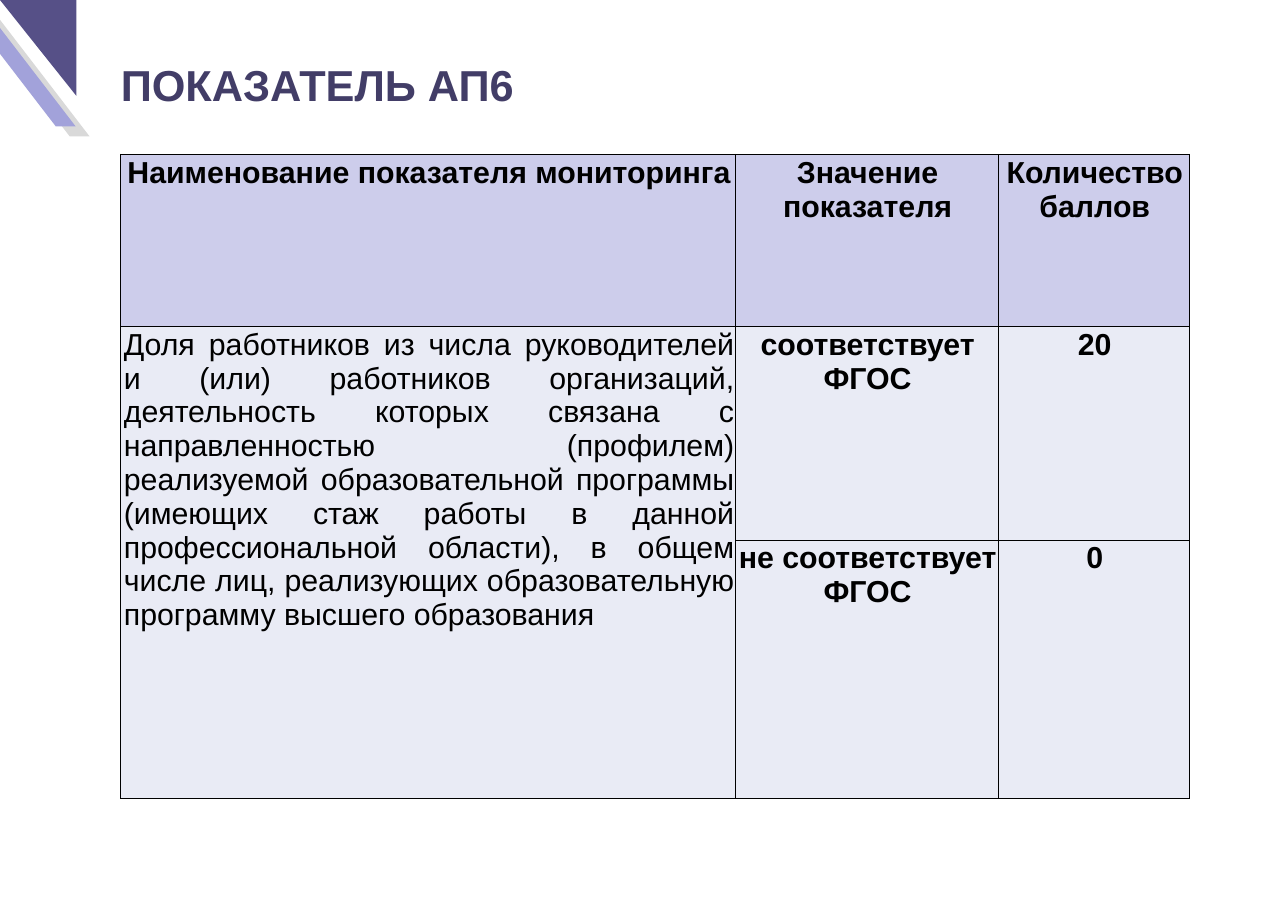
from dataclasses import dataclass

from lxml import etree
from pptx import Presentation
from pptx.dml.color import RGBColor
from pptx.enum import shapes, text
from pptx.oxml import ns
from pptx.util import Inches, Pt

TITLE = "ПОКАЗАТЕЛЬ АП6"
HEADER = ["Наименование показателя мониторинга", "Значение показателя", "Количество баллов"]
INDICATOR = (
    "Доля работников из числа руководителей и (или) работников организаций, "
    "деятельность которых связана с направленностью (профилем) реализуемой "
    "образовательной программы (имеющих стаж работы в данной профессиональной "
    "области), в общем числе лиц, реализующих образовательную программу высшего "
    "образования"
)
ROWS = [
    HEADER,
    [INDICATOR, "соответствует ФГОС", "20"],
    ["", "не соответствует ФГОС", "0"],
]
COLUMN_WIDTHS = [7.89, 3.37, 2.46]
ROW_HEIGHTS = [2.21, 2.74, 3.32]
LEFT = 1.55


@dataclass(frozen=True)
class Theme:
    font: str = "Arial"
    title_size: int = 40
    table_size: int = 28
    title: str = "423D67"
    ink: str = "000000"
    header_fill: str = "CDCDEB"
    body_fill: str = "E9EBF5"
    shade: str = "D9D9D9"
    stripe: str = "A2A2DA"
    corner: str = "565087"


THEME = Theme()
STRIPES = [(-0.35, 0.13, THEME.shade), (-0.53, 0, THEME.stripe)]


def format_text(para, size, color, bold):
    for span in para.runs:
        span.font.name = THEME.font
        span.font.size = Pt(size)
        span.font.bold = bold
        span.font.color.rgb = RGBColor.from_string(color)


def set_margins(box, left, top, right, bottom):
    box.margin_left, box.margin_top = Inches(left), Inches(top)
    box.margin_right, box.margin_bottom = Inches(right), Inches(bottom)


def add_solid(page, kind, left, top, width, height, color):
    shape = page.shapes.add_shape(kind, *map(Inches, (left, top, width, height)))
    shape.shadow.inherit = False
    shape.fill.solid()
    shape.fill.fore_color.rgb = RGBColor.from_string(color)
    shape.line.fill.background()
    return shape


def add_corner(page):
    for left, top, color in STRIPES:
        stripe = add_solid(page, shapes.MSO_SHAPE.PARALLELOGRAM, left, top, 1.5, 1.62, color)
        stripe.adjustments[0] = 0.83
        stripe.element.spPr.find(ns.qn("a:xfrm")).set("flipH", "1")
    triangle = add_solid(page, shapes.MSO_SHAPE.RIGHT_TRIANGLE, 0, 0, 0.98, 1.23, THEME.corner)
    triangle.rotation = 180


def add_title(page):
    title = page.shapes.title
    title.left, title.top = Inches(LEFT), Inches(0.7)
    title.width, title.height = Inches(12.41), Inches(0.77)
    frame = title.text_frame
    frame.text = TITLE
    frame.word_wrap = True
    frame.vertical_anchor = text.MSO_ANCHOR.TOP
    set_margins(frame, 0, 0.05, 0.1, 0.05)
    para = frame.paragraphs[0]
    para.alignment = text.PP_ALIGN.LEFT
    format_text(para, THEME.title_size, THEME.title, True)


def add_borders(cell):
    """Draw the four cell edges; must run before the fill is set."""
    properties = cell._tc.get_or_add_tcPr()
    for side in ("lnL", "lnR", "lnT", "lnB"):
        line = etree.SubElement(properties, ns.qn(f"a:{side}"), w=str(Pt(1)))
        fill = etree.SubElement(line, ns.qn("a:solidFill"))
        etree.SubElement(fill, ns.qn("a:srgbClr"), val=THEME.ink)


def add_scores(page):
    size = (sum(COLUMN_WIDTHS), sum(ROW_HEIGHTS))
    frame = page.shapes.add_table(
        len(ROWS), len(HEADER), *map(Inches, (LEFT, 1.98, *size)))
    table = frame.table
    table.first_row = table.horz_banding = False
    for column, width in zip(table.columns, COLUMN_WIDTHS):
        column.width = Inches(width)
    for row, height in zip(table.rows, ROW_HEIGHTS):
        row.height = Inches(height)
    for r, values in enumerate(ROWS):
        for c, value in enumerate(values):
            cell = table.cell(r, c)
            add_borders(cell)
            fill = THEME.body_fill if r else THEME.header_fill
            cell.fill.solid()
            cell.fill.fore_color.rgb = RGBColor.from_string(fill)
            set_margins(cell, 0.04, 0.02, 0.02, 0.02)
            cell.text = value
            para = cell.text_frame.paragraphs[0]
            is_indicator = r > 0 and c == 0
            para.alignment = text.PP_ALIGN.JUSTIFY if is_indicator else text.PP_ALIGN.CENTER
            format_text(para, THEME.table_size, THEME.ink, not is_indicator)
    table.cell(1, 0).merge(table.cell(2, 0))


def main():
    deck = Presentation()
    deck.slide_width, deck.slide_height = Inches(16.53), Inches(11.69)
    page = deck.slides.add_slide(deck.slide_layouts.get_by_name("Title Only"))
    add_corner(page)
    add_title(page)
    add_scores(page)
    deck.save("out.pptx")


if __name__ == "__main__":
    main()
